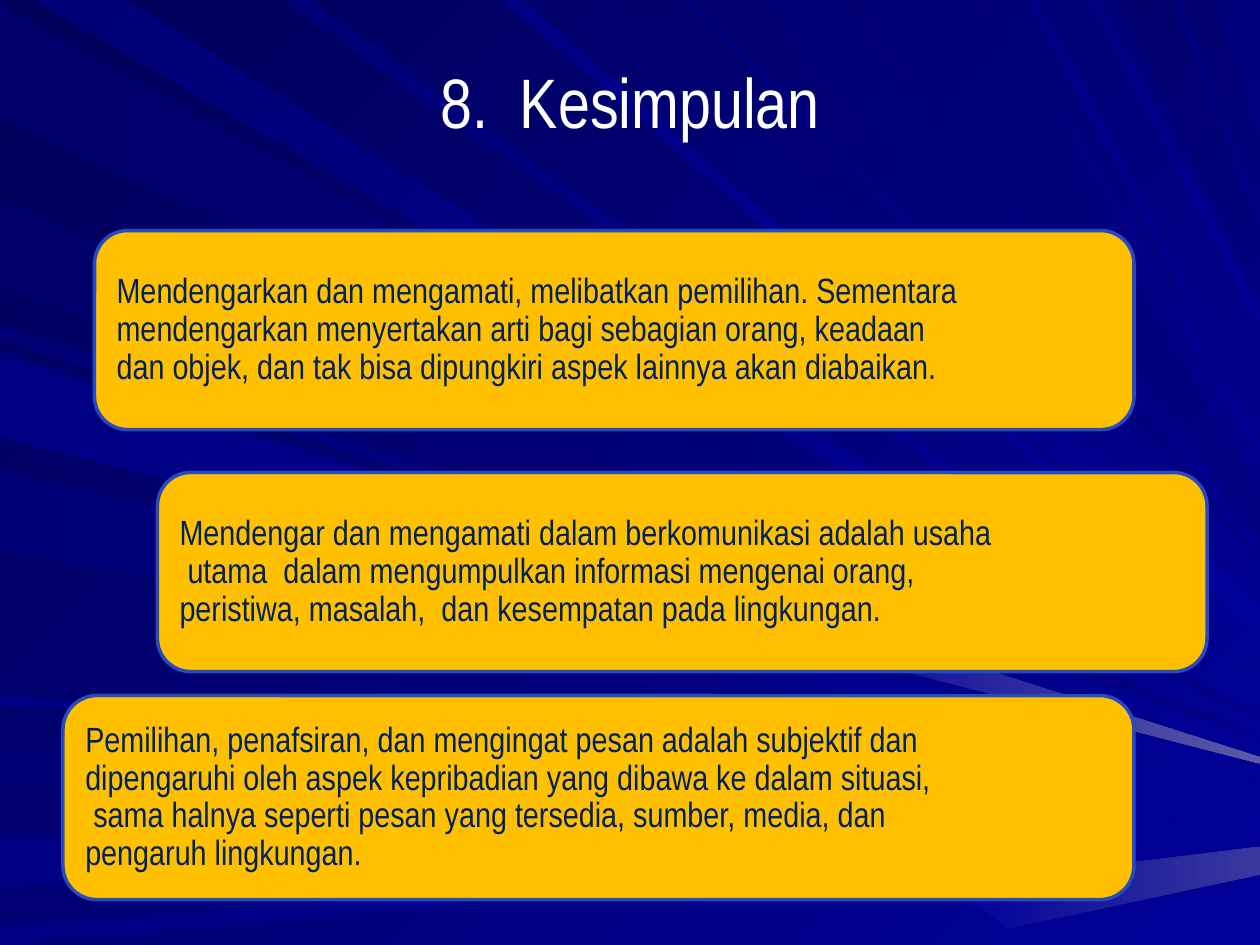
from dataclasses import dataclass

from pptx import Presentation
from pptx.dml.color import RGBColor
from pptx.enum.shapes import MSO_SHAPE
from pptx.enum.text import MSO_ANCHOR, PP_ALIGN
from pptx.util import Emu, Pt

ROUNDED = MSO_SHAPE.ROUNDED_RECTANGLE
MIDDLE = MSO_ANCHOR.MIDDLE
LEFT, CENTER = PP_ALIGN.LEFT, PP_ALIGN.CENTER
PX = 9144


@dataclass(frozen=True)
class Theme:
    """Colours, font and type sizes of the slide."""
    font: str = "Arial Narrow"
    title_size: int = 40
    body_size: int = 20
    line_width: int = 2
    title: str = "FFFFFF"
    body: str = "002060"
    card: str = "FFC000"
    card_line: str = "264BBD"
    back: tuple = ("000058", "000099")
    dark: str = "00006B"
    dim: str = "000076"
    soft: str = "000085"
    deep: str = "000080"
    bright: str = "000099"
    haze_low: str = "39399E"
    haze_high: str = "5A5AA6"


T = Theme()

LEFT_RAYS = [
    (2, 93, 570, T.dark, T.deep),
    (596, 623, 632, T.dim, T.bright),
    (665, 704, 647, T.soft, T.bright),
    (735, 750, 662, T.soft, T.bright),
    (258, 270, 589, T.dim, T.bright),
    (159, 228, 585, T.dark, T.deep),
    (278, 342, 600, T.dim, T.bright),
    (374, 437, 606, T.dim, T.bright),
    (552, 560, 622, T.soft, T.bright),
    (283, 347, 604, T.soft, T.bright),
]

TOP_RAYS = [
    (26, 101, 563, 563, T.dim, T.bright),
    (398, 416, 521, 515, T.soft, T.bright),
    (426, 492, 507, 479, T.dark, T.bright),
    (540, 552, 463, 463, T.dim, T.bright),
    (606, 661, 446, 445, T.dim, T.deep),
    (225, 247, 552, 547, T.dim, T.bright),
    (686, 770, 428, 390, T.dim, T.deep),
    (785, 792, 360, 354, T.dim, T.bright),
    (815, 824, 336, 335, T.soft, T.bright),
    (865, 872, 258, 249, T.soft, T.bright),
    (887, 930, 237, 183, T.dark, T.deep),
    (939, 964, 167, 114, T.dark, T.deep),
]

HAZE = [
    (T.haze_low, [(756, 702), (1000, 672), (1000, 694), (800, 737)]),
    (T.haze_high, [(637, 485), (1000, 601), (1000, 606), (633, 511)]),
]

CARDS = [
    ((75, 183, 825, 158), [
        "Mendengarkan dan mengamati, melibatkan pemilihan. Sementara",
        "mendengarkan menyertakan arti bagi sebagian orang, keadaan",
        "dan objek, dan tak bisa dipungkiri aspek lainnya akan diabaikan."]),
    ((125, 375, 833, 158), [
        "Mendengar dan mengamati dalam berkomunikasi adalah usaha",
        " utama  dalam mengumpulkan informasi mengenai orang,",
        "peristiwa, masalah,  dan kesempatan pada lingkungan."]),
    ((50, 552, 850, 162), [
        "Pemilihan, penafsiran, dan mengingat pesan adalah subjektif dan",
        "dipengaruhi oleh aspek kepribadian yang dibawa ke dalam situasi,",
        " sama halnya seperti pesan yang tersedia, sumber, media, dan",
        "pengaruh lingkungan."]),
]


def to_emu(box):
    """Turn a box in px into EMU lengths."""
    return [Emu(v * PX) for v in box]


def rgb(color):
    """Return the colour object of a hex string."""
    return RGBColor.from_string(color)


def paint(fill, start, end, angle):
    """Fill with a gradient turned clockwise by angle."""
    fill.gradient()
    fill.gradient_angle = (360 - angle) % 360
    for stop, color in zip(fill.gradient_stops, (start, end)):
        stop.color.rgb = rgb(color)


def write(tf, lines, size, color, align, spacing):
    """Write one paragraph per line into a text frame."""
    tf.word_wrap = True
    tf.vertical_anchor = MIDDLE
    for i, line in enumerate(lines):
        p = tf.paragraphs[0] if i == 0 else tf.add_paragraph()
        p.add_run().text = line
        p.alignment = align
        p.line_spacing = spacing
        p.font.name = T.font
        p.font.size = Pt(size)
        p.font.color.rgb = rgb(color)


def add_ray(group, origin, outline, start, end, angle):
    """Draw one ray whose outline is relative to the origin."""
    left, top = origin
    first, *rest = [(left + x, top + y) for x, y in outline]
    builder = group.shapes.build_freeform(*first, scale=PX)
    builder.add_line_segments(rest, close=True)
    sp = builder.convert_to_shape()
    sp.shadow.inherit = False
    sp.line.fill.background()
    paint(sp.fill, start, end, angle)


def add_backdrop(s, box):
    """Paint the background and rays running to the right edge of the box."""
    paint(s.background.fill, *T.back, 45)
    origin, width = box[:2], box[2]
    group = s.shapes.add_group_shape()
    for y1, y2, far, start, end in LEFT_RAYS:
        add_ray(group, origin, [(0, y1), (width, far), (0, y2)], start, end, 0)
    for x1, x2, low, high, start, end in TOP_RAYS:
        outline = [(x1, 0), (width, low), (width, high), (x2, 0)]
        add_ray(group, origin, outline, start, end, 45)
    for color, outline in HAZE:
        add_ray(group, origin, outline, T.bright, color, 0)


def add_title(s, box, text):
    """Place the centred slide title."""
    sp = s.shapes.add_textbox(*to_emu(box))
    write(sp.text_frame, [text], T.title_size, T.title, CENTER, 1.0)


def add_card(s, box, lines):
    """Place one rounded card holding a conclusion."""
    sp = s.shapes.add_shape(ROUNDED, *to_emu(box))
    sp.shadow.inherit = False
    sp.fill.solid()
    sp.fill.fore_color.rgb = rgb(T.card)
    sp.line.color.rgb = rgb(T.card_line)
    sp.line.width = Pt(T.line_width)
    write(sp.text_frame, lines, T.body_size, T.body, LEFT, 0.9)


def main():
    """Build the slide and save it."""
    prs = Presentation()
    prs.slide_width, prs.slide_height = to_emu((1000, 750))
    s = prs.slides.add_slide(prs.slide_layouts[6])
    add_backdrop(s, (0, 0, 1000, 750))
    add_title(s, (50, 34, 900, 92), "8.  Kesimpulan")
    for box, lines in CARDS:
        add_card(s, box, lines)
    prs.save("out.pptx")


if __name__ == "__main__":
    main()
